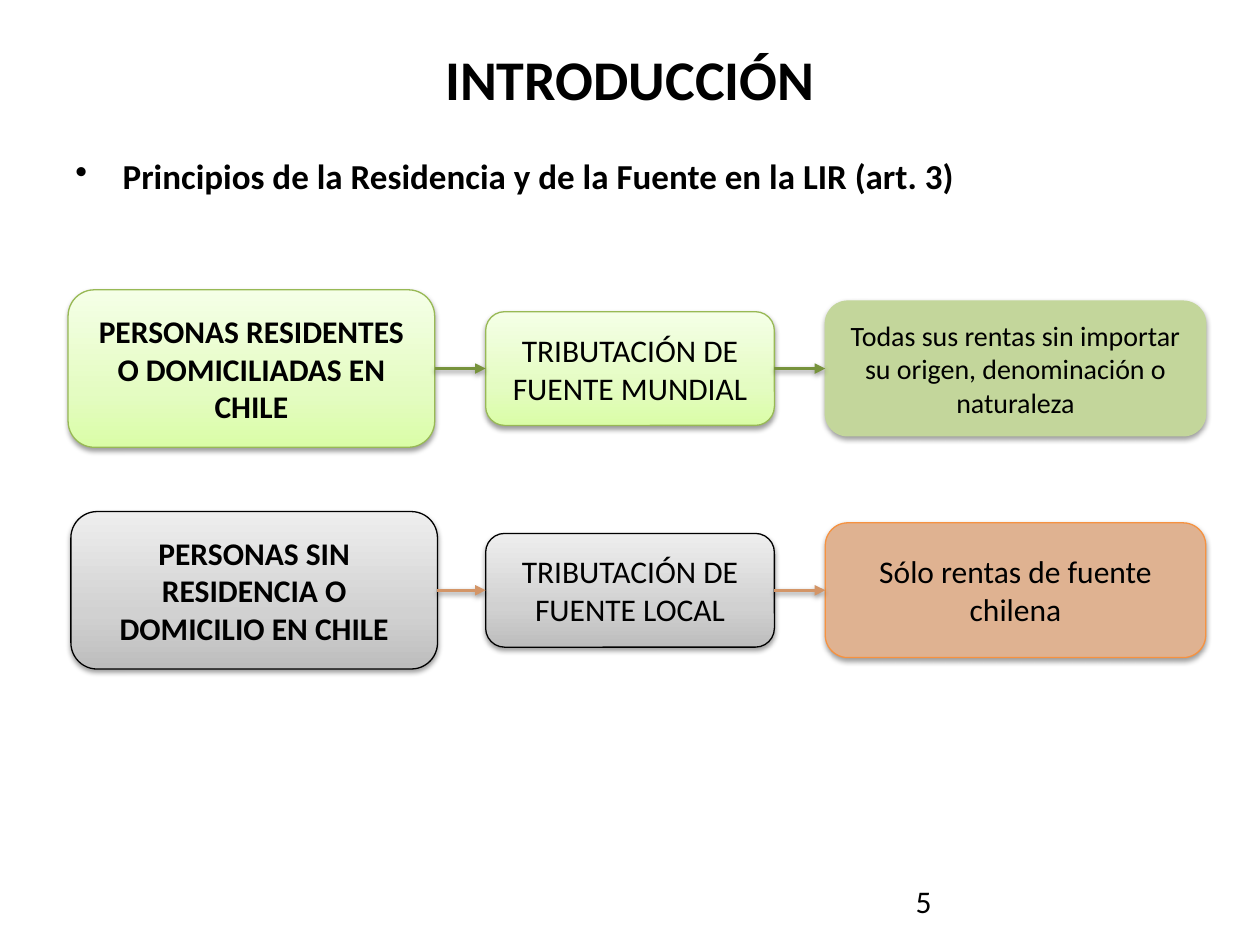
from copy import deepcopy

from pptx import Presentation
from pptx.dml.color import RGBColor
from pptx.enum.shapes import MSO_CONNECTOR, MSO_SHAPE
from pptx.enum.text import MSO_ANCHOR, PP_ALIGN
from pptx.oxml import parse_xml
from pptx.oxml.ns import nsdecls, qn
from pptx.oxml.xmlchemy import OxmlElement
from pptx.util import Pt

ROUNDED = MSO_SHAPE.ROUNDED_RECTANGLE
STRAIGHT = MSO_CONNECTOR.STRAIGHT
CENTER, LEFT, JUSTIFY = PP_ALIGN.CENTER, PP_ALIGN.LEFT, PP_ALIGN.JUSTIFY
TOP, MIDDLE = MSO_ANCHOR.TOP, MSO_ANCHOR.MIDDLE
LEFT_SIDE, RIGHT_SIDE = 1, 3

FONT = "Calibri"
BLACK = "000000"
GREEN_GRADIENT = ((0, "DAFDA7"), (0.35, "E4FCC2"), (1, "F5FFE7"))
GRAY_GRADIENT = ((0, "BDBDBD"), (0.35, "D1D1D1"), (1, "EEEEEE"))

# Left, width and height of the second and third columns
TAX_COLUMN = (277.5, 165, 65)
INCOME_COLUMN = (471.6, 217.4, 77)

ROWS = [
    {
        "middle": 210.6,
        "arrow": "77933C",
        "boxes": [
            ((38.9, 209.5, 90), "PERSONAS RESIDENTES O DOMICILIADAS EN CHILE",
             GREEN_GRADIENT, "98B955", {"bold": True}),
            (TAX_COLUMN, "TRIBUTACIÓN DE FUENTE MUNDIAL",
             GREEN_GRADIENT, "98B955", {}),
            (INCOME_COLUMN,
             "Todas sus rentas sin importar su origen, denominación o naturaleza",
             "C3D69B", "C3D69B", {"size": 16}),
        ],
    },
    {
        "middle": 337.3,
        "arrow": "D39567",
        "boxes": [
            ((40.5, 209.5, 90), "PERSONAS SIN RESIDENCIA O DOMICILIO EN CHILE",
             GRAY_GRADIENT, BLACK, {"bold": True}),
            (TAX_COLUMN, "TRIBUTACIÓN DE FUENTE LOCAL",
             GRAY_GRADIENT, BLACK, {}),
            (INCOME_COLUMN, "Sólo rentas de fuente chilena",
             "DFB291", "F69240", {}),
        ],
    },
]


def rgb(color):
    return RGBColor.from_string(color)


def write(frame, text, size=18, bold=False, align=LEFT, anchor=TOP, bullet_indent=None):
    frame.word_wrap = True
    frame.vertical_anchor = anchor
    para = frame.paragraphs[0]
    para.alignment = align
    if bullet_indent:
        add_bullet(para, bullet_indent)
    span = para.add_run()
    span.text = text
    span.font.name = FONT
    span.font.size = Pt(size)
    span.font.bold = bold
    span.font.color.rgb = rgb(BLACK)


def add_bullet(para, indent):
    properties = para._p.get_or_add_pPr()
    properties.set("marL", str(Pt(indent)))
    properties.set("indent", str(-Pt(indent)))
    bullet = OxmlElement("a:buChar")
    bullet.set("char", "•")
    properties.append(bullet)


def add_text(slide, text, left, top, width, height, **text_format):
    box = slide.shapes.add_textbox(Pt(left), Pt(top), Pt(width), Pt(height))
    write(box.text_frame, text, **text_format)


def add_shadow(shape):
    """Append a soft downward shadow; the line must be set before."""
    shape._element.spPr.append(parse_xml(
        f'<a:effectLst {nsdecls("a")}>'
        f'<a:outerShdw blurRad="{Pt(3.1)}" dist="{Pt(1.6)}" dir="5400000" rotWithShape="0">'
        '<a:srgbClr val="000000"><a:alpha val="38000"/></a:srgbClr>'
        '</a:outerShdw></a:effectLst>'))


def paint(shape, fill):
    """Fill with one colour, or with three gradient stops running upwards."""
    if isinstance(fill, str):
        shape.fill.solid()
        shape.fill.fore_color.rgb = rgb(fill)
        return
    shape.fill.gradient()
    shape.fill.gradient_angle = 90
    stop_list = shape._element.spPr.find(".//" + qn("a:gsLst"))
    stop_list.append(deepcopy(stop_list[-1]))
    for stop, (position, color) in zip(shape.fill.gradient_stops, fill):
        stop.position = position
        stop.color.rgb = rgb(color)


def add_box(slide, column, middle, text, fill, outline, text_format):
    left, width, height = column
    box = slide.shapes.add_shape(
        ROUNDED, Pt(left), Pt(middle - height / 2), Pt(width), Pt(height))
    paint(box, fill)
    box.line.color.rgb = rgb(outline)
    box.line.width = Pt(0.75)
    add_shadow(box)
    write(box.text_frame, text, align=CENTER, anchor=MIDDLE, **text_format)
    return box


def add_arrow(slide, source, target, color):
    arrow = slide.shapes.add_connector(STRAIGHT, 0, 0, 0, 0)
    arrow.begin_connect(source, RIGHT_SIDE)
    arrow.end_connect(target, LEFT_SIDE)
    arrow.line.color.rgb = rgb(color)
    arrow.line.width = Pt(2)
    head = OxmlElement("a:tailEnd")
    head.set("type", "triangle")
    arrow._element.spPr.find(qn("a:ln")).append(head)
    add_shadow(arrow)


def add_row(slide, row):
    boxes = [add_box(slide, column, row["middle"], *details)
             for column, *details in row["boxes"]]
    for source, target in zip(boxes, boxes[1:]):
        add_arrow(slide, source, target, row["arrow"])


def main():
    deck = Presentation()
    deck.slide_width, deck.slide_height = Pt(720), Pt(540)
    page = deck.slides.add_slide(deck.slide_layouts[6])

    add_text(page, "INTRODUCCIÓN", 36, 21.6, 648, 90, size=32, bold=True, align=CENTER)
    add_text(page, "Principios de la Residencia y de la Fuente en la LIR (art. 3)",
             36, 85, 648, 397.4, size=20, bold=True, align=JUSTIFY, bullet_indent=27)
    for row in ROWS:
        add_row(page, row)
    add_text(page, "5", 516.2, 500.4, 167.8, 28.8)

    deck.save("out.pptx")


if __name__ == "__main__":
    main()
